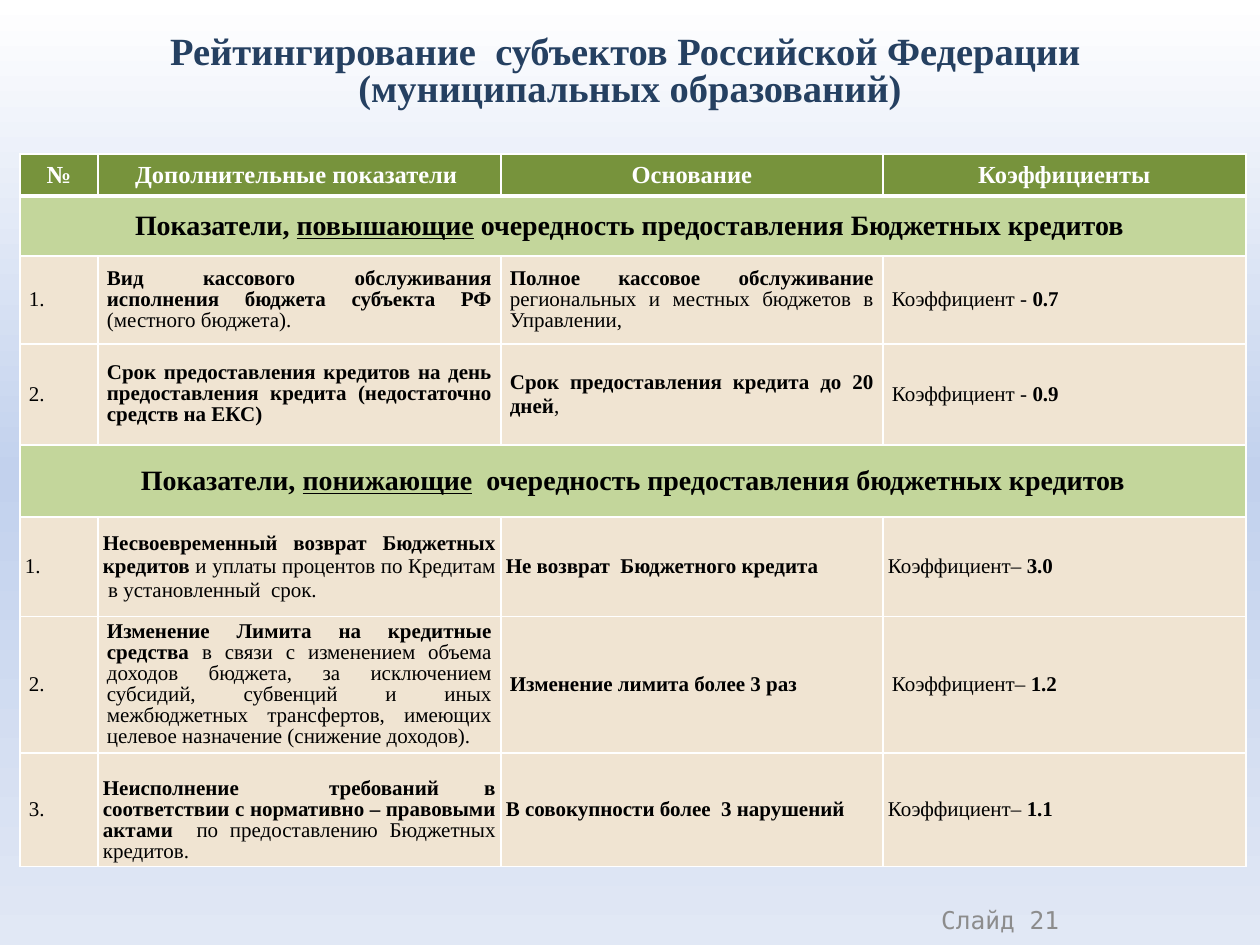
from dataclasses import dataclass

from lxml.etree import SubElement
from pptx import Presentation
from pptx.dml.color import RGBColor
from pptx.enum.text import MSO_ANCHOR, PP_ALIGN
from pptx.oxml.ns import qn
from pptx.util import Pt


@dataclass(frozen=True)
class Theme:
    serif: str = "Times New Roman"
    mono: str = "DejaVu Sans Mono"
    navy: str = "254061"
    white: str = "FFFFFF"
    black: str = "000000"
    gray: str = "8C8C8C"
    header: str = "77933C"
    section: str = "C3D69B"
    body: str = "F0E4D2"
    backdrop: tuple = ((0, "FFFFFF"), (50, "C2D1ED"), (100, "E1E8F5"))
    title_size: int = 22
    section_size: int = 16
    header_size: int = 14
    body_size: int = 12


T = Theme()
PX = 914400 // 126
WIDE, NARROW = 9, 5  # side insets of cells, px

# Content: a run is (text, style), where style holds b for bold, u for underline
TITLE = ["Рейтингирование  субъектов Российской Федерации ", "(муниципальных образований)"]
TITLE_BOX = (0, 0, 1260, 145)
FOOTER = "Слайд 21"
FOOTER_BOX = (779, 895, 293, 50)

TABLE_AT = (20, 154)
COLUMNS = [78, 403, 382, 363]
HEADERS = ["№", "Дополнительные показатели ", "Основание", "Коэффициенты"]
HEADER_HEIGHT = 42

# A section is (height, runs, rows);
# a row is (height, cells), a cell is (inset, line spacing, top inset, runs)
SECTIONS = [
    (60, [("Показатели, ", "b"), ("повышающие", "bu"),
          (" очередность предоставления Бюджетных кредитов ", "b")], [
        (88, [
            (WIDE, 1, 0, [("1.", "")]),
            (WIDE, 0.9, 0, [("Вид кассового обслуживания исполнения бюджета субъекта РФ", "b"),
                            (" (местного бюджета). ", "")]),
            (WIDE, 0.9, 0, [("Полное кассовое обслуживание", "b"),
                            (" региональных и местных бюджетов в Управлении, ", "")]),
            (WIDE, 0.9, 0, [("Коэффициент - ", ""), ("0.7", "b")]),
        ]),
        (101, [
            (WIDE, 1, 0, [("2.", "")]),
            (WIDE, 0.9, 0, [("Срок предоставления кредитов на день предоставления кредита "
                             "(недостаточно средств на ЕКС)", "b")]),
            (WIDE, 1, 0, [("Срок предоставления кредита до 20 дней", "b"), (", ", "")]),
            (WIDE, 1, 0, [("Коэффициент - ", ""), ("0.9", "b")]),
        ]),
    ]),
    (72, [("Показатели, ", "b"), ("понижающие", "bu"),
          ("  очередность предоставления бюджетных кредитов", "b")], [
        (100, [
            (NARROW, 1, 0, [("1.", "")]),
            (NARROW, 1, 0, [("Несвоевременный возврат Бюджетных кредитов ", "b"),
                            ("и уплаты процентов по Кредитам  в установленный  срок. ", "")]),
            (NARROW, 1, 0, [("Не возврат  Бюджетного кредита", "b")]),
            (NARROW, 1, 0, [("Коэффициент– ", ""), ("3.0 ", "b")]),
        ]),
        (126, [
            (WIDE, 1, 0, [("2.", "")]),
            (WIDE, 0.9, 0, [("Изменение Лимита на кредитные средства ", "b"),
                            ("в связи с изменением объема доходов бюджета, за исключением "
                             "субсидий, субвенций и иных межбюджетных трансфертов, имеющих "
                             "целевое назначение (снижение доходов).", "")]),
            (WIDE, 0.9, 0, [("Изменение лимита более 3 раз", "b")]),
            (WIDE, 0.9, 0, [("Коэффициент– ", ""), ("1.2", "b")]),
        ]),
        (107, [
            (WIDE, 1, 0, [("3.", "")]),
            (NARROW, 0.9, 23, [("Неисполнение  требований в соответствии с нормативно – "
                                "правовыми актами ", "b"),
                               (" по предоставлению Бюджетных кредитов.", "")]),
            (NARROW, 1, 0, [("В совокупности более  3 нарушений", "b")]),
            (NARROW, 1, 0, [("Коэффициент– ", ""), ("1.1", "b")]),
        ]),
    ]),
]


def px(*values):
    return [v * PX for v in values]


def add_run(p, text, style, size, color, font=T.serif):
    r = p.add_run()
    r.text = text
    r.font.name, r.font.size = font, Pt(size)
    r.font.bold, r.font.underline = "b" in style, "u" in style
    r.font.color.rgb = RGBColor.from_string(color)


def add_textbox(slide, box, align):
    tf = slide.shapes.add_textbox(*px(*box)).text_frame
    tf.word_wrap = True
    tf.vertical_anchor = MSO_ANCHOR.MIDDLE
    p = tf.paragraphs[0]
    p.alignment = align
    return p


def set_border(cell, side, width):
    ln = SubElement(cell._tc.get_or_add_tcPr(), qn(f"a:ln{side}"), w=str(Pt(width)))
    SubElement(SubElement(ln, qn("a:solidFill")), qn("a:srgbClr"), val=T.white)


def style_cell(cell, fill, top_width=1, bottom_width=1):
    for side, width in (("L", 1), ("R", 1), ("T", top_width), ("B", bottom_width)):
        set_border(cell, side, width)
    cell.fill.solid()
    cell.fill.fore_color.rgb = RGBColor.from_string(fill)


def fill_cell(cell, runs, size, color, align, inset=WIDE, spacing=1, top=0):
    cell.vertical_anchor = MSO_ANCHOR.MIDDLE
    cell.margin_left = cell.margin_right = inset * PX
    cell.margin_top, cell.margin_bottom = px(top, 0)
    p = cell.text_frame.paragraphs[0]
    p.alignment, p.line_spacing = align, spacing
    for text, style in runs:
        add_run(p, text, style, size, color)


def set_backdrop(slide):
    fill = slide.background.fill
    fill.gradient()
    fill.gradient_angle = 270
    stops = slide._element.find(".//" + qn("a:gsLst"))
    for stop in list(stops):
        stops.remove(stop)
    for pos, color in T.backdrop:
        gs = SubElement(stops, qn("a:gs"), pos=str(pos * 1000))
        SubElement(gs, qn("a:srgbClr"), val=color)


def add_rating_table(slide):
    # Flatten headers, section bands and rows into one sequence
    lines = [("header", HEADER_HEIGHT, HEADERS)]
    for height, runs, rows in SECTIONS:
        lines.append(("section", height, runs))
        lines += [("body", h, cells) for h, cells in rows]

    size = (sum(COLUMNS), sum(height for _, height, _ in lines))
    table = slide.shapes.add_table(len(lines), len(COLUMNS), *px(*TABLE_AT, *size)).table
    table.first_row = table.horz_banding = False
    for column, width in zip(table.columns, COLUMNS):
        column.width = width * PX

    for i, (kind, height, content) in enumerate(lines):
        table.rows[i].height = height * PX
        cells = [table.cell(i, j) for j in range(len(COLUMNS))]
        for cell in cells:
            style_cell(cell, getattr(T, kind), 3 if i == 1 else 1, 3 if i == 0 else 1)
        if kind == "header":
            for cell, text in zip(cells, content):
                fill_cell(cell, [(text, "b")], T.header_size, T.white, PP_ALIGN.CENTER)
        elif kind == "section":
            cells[0].merge(cells[-1])
            fill_cell(cells[0], content, T.section_size, T.black, PP_ALIGN.CENTER)
        else:
            for cell, (inset, spacing, top, runs) in zip(cells, content):
                fill_cell(cell, runs, T.body_size, T.black, PP_ALIGN.JUSTIFY,
                          inset, spacing, top)


def main():
    prs = Presentation()
    prs.slide_width, prs.slide_height = px(1260, 945)
    slide = prs.slides.add_slide(prs.slide_layouts[6])
    set_backdrop(slide)

    # Title
    p = add_textbox(slide, TITLE_BOX, PP_ALIGN.CENTER)
    p.line_spacing = 0.8
    for i, line in enumerate(TITLE):
        if i:
            p.add_line_break()
        add_run(p, line, "b", T.title_size, T.navy)

    add_rating_table(slide)

    # Slide number
    p = add_textbox(slide, FOOTER_BOX, PP_ALIGN.RIGHT)
    add_run(p, FOOTER, "", T.header_size, T.gray, T.mono)

    prs.save("out.pptx")


if __name__ == "__main__":
    main()
